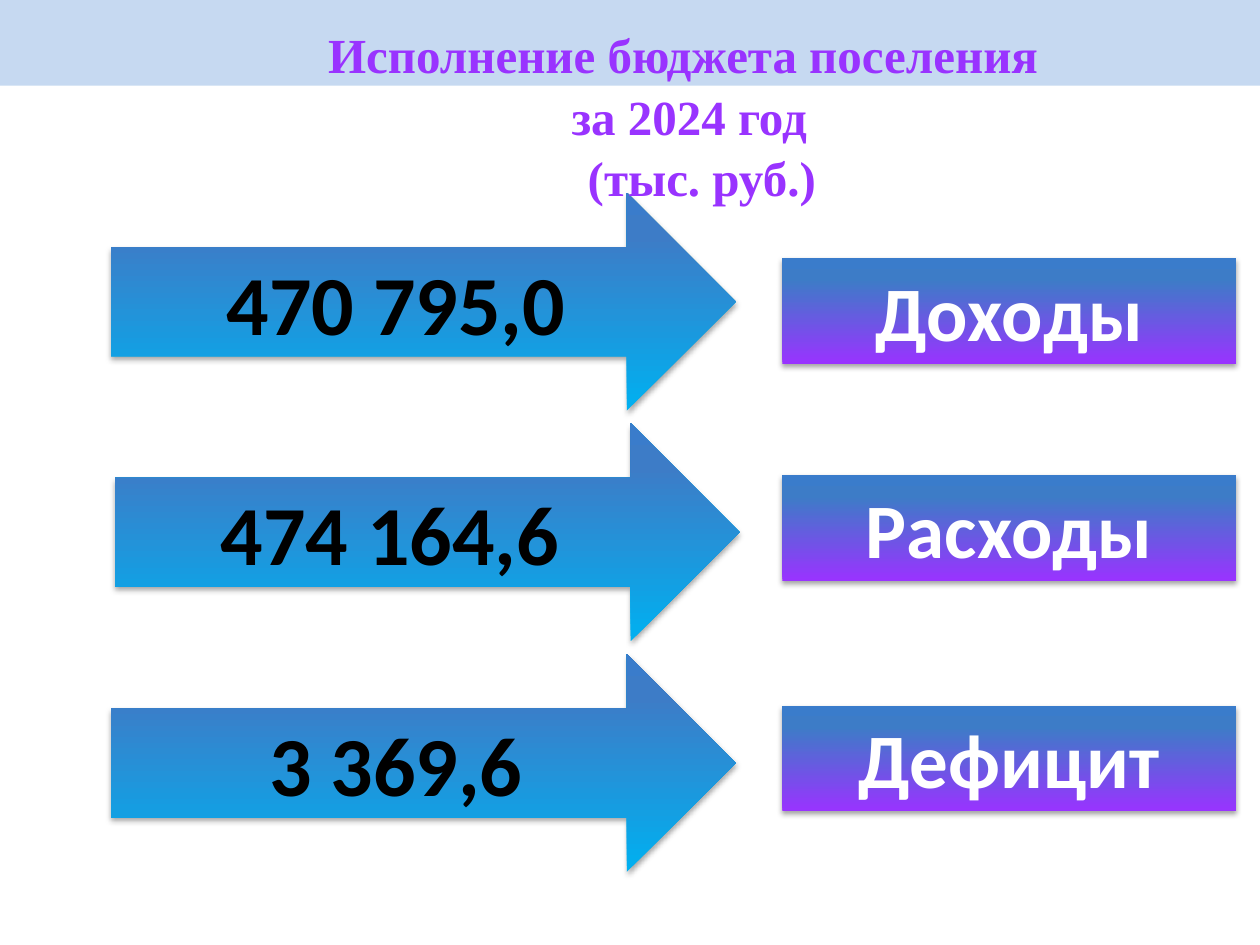
from lxml import etree
from pptx import Presentation
from pptx.dml.color import RGBColor
from pptx.enum.shapes import MSO_SHAPE
from pptx.enum.text import MSO_ANCHOR, PP_ALIGN
from pptx.oxml import parse_xml
from pptx.oxml.ns import nsdecls, qn
from pptx.util import Inches, Pt

ARROW, RECTANGLE = MSO_SHAPE.RIGHT_ARROW, MSO_SHAPE.RECTANGLE
TOP, MIDDLE = MSO_ANCHOR.TOP, MSO_ANCHOR.MIDDLE
CENTER = PP_ALIGN.CENTER

BLACK = RGBColor(0x00, 0x00, 0x00)
WHITE = RGBColor(0xFF, 0xFF, 0xFF)
PALE_BLUE = RGBColor(0xC6, 0xD9, 0xF1)
PURPLE = RGBColor(0x99, 0x33, 0xFF)
SKY = RGBColor(0x00, 0xB0, 0xF0)
BLUE = RGBColor(0x3D, 0x7C, 0xC7)
BLUE_TOP = RGBColor(0x3A, 0x7C, 0xCB)

TITLE_LINES = [
    ("Исполнение бюджета поселения ", 0),
    ("за 2024 год", 0),
    ("(тыс. руб.)", 0.2),
]
BUDGET_ROWS = [
    ("470 795,0", "Доходы", 0.88, 1.53, 2.05),
    ("474 164,6 ", "Расходы", 0.91, 3.36, 3.77),
    ("3 369,6", "Дефицит", 0.88, 5.19, 5.6),
]


def style_text(paragraph, text, font_name, size, color):
    """Write bold centred text into a paragraph."""
    paragraph.text = text
    paragraph.alignment = CENTER
    font = paragraph.font
    font.name, font.size, font.bold = font_name, Pt(size), True
    font.color.rgb = color


def fill_upward(shape, base_color):
    """Fill a shape with a gradient rising from base_color to blue."""
    shape.fill.gradient()
    shape.fill.gradient_angle = 90
    stops = shape._element.spPr.find(qn("a:gradFill")).find(qn("a:gsLst"))
    for stop in list(stops):
        stops.remove(stop)
    for percent, color in ((0, base_color), (80, BLUE), (100, BLUE_TOP)):
        stop = etree.SubElement(stops, qn("a:gs"), pos=str(percent * 1000))
        etree.SubElement(stop, qn("a:srgbClr"), val=str(color))


def cast_shadow(shape):
    """Give a shape a soft shadow below it."""
    shape.shadow.inherit = False
    shape._element.spPr.find(qn("a:effectLst")).append(parse_xml(
        f'<a:outerShdw {nsdecls("a")} blurRad="{Pt(3.1)}" dist="{Pt(1.8)}" '
        f'dir="5400000" rotWithShape="0"><a:srgbClr val="{BLACK}">'
        '<a:alpha val="35000"/></a:srgbClr></a:outerShdw>'))


def add_block(slide, kind, box, text, size, color, base_color, anchor):
    """Add a shaded shape with one line of text in the given box."""
    block = slide.shapes.add_shape(kind, *map(Inches, box))
    fill_upward(block, base_color)
    block.line.fill.background()
    cast_shadow(block)
    block.text_frame.vertical_anchor = anchor
    style_text(block.text_frame.paragraphs[0], text, "Calibri", size, color)


def add_header_band(slide, box):
    """Add the pale band along the top edge."""
    band = slide.shapes.add_shape(RECTANGLE, *map(Inches, box))
    band.shadow.inherit = False
    band.fill.solid()
    band.fill.fore_color.rgb = PALE_BLUE
    band.line.fill.background()


def add_title(slide, box):
    """Add the three-line title."""
    frame = slide.shapes.add_textbox(*map(Inches, box)).text_frame
    frame.word_wrap = True
    for index, (line, indent) in enumerate(TITLE_LINES):
        paragraph = frame.add_paragraph() if index else frame.paragraphs[0]
        style_text(paragraph, line, "Times New Roman", 28, PURPLE)
        paragraph.line_spacing = 1.04
        if indent:
            paragraph._p.get_or_add_pPr().set("marL", str(Inches(indent)))


def add_budget_row(slide, amount, label, arrow_left, arrow_top, label_top):
    """Add an amount arrow and the label it points to."""
    add_block(slide, ARROW, (arrow_left, arrow_top, 4.96, 1.73),
              amount, 48, BLACK, SKY, MIDDLE)
    add_block(slide, RECTANGLE, (6.21, label_top, 3.6, 0.84),
              label, 44, WHITE, PURPLE, TOP)


def main():
    """Build the budget slide and save it."""
    deck = Presentation()
    deck.slide_width, deck.slide_height = Inches(10), Inches(7.5)
    slide = deck.slides.add_slide(deck.slide_layouts[6])
    add_header_band(slide, (0, 0, 10, 0.68))
    for row in BUDGET_ROWS:
        add_budget_row(slide, *row)
    add_title(slide, (1.14, 0.13, 8.66, 1.51))
    deck.save("out.pptx")


if __name__ == "__main__":
    main()
